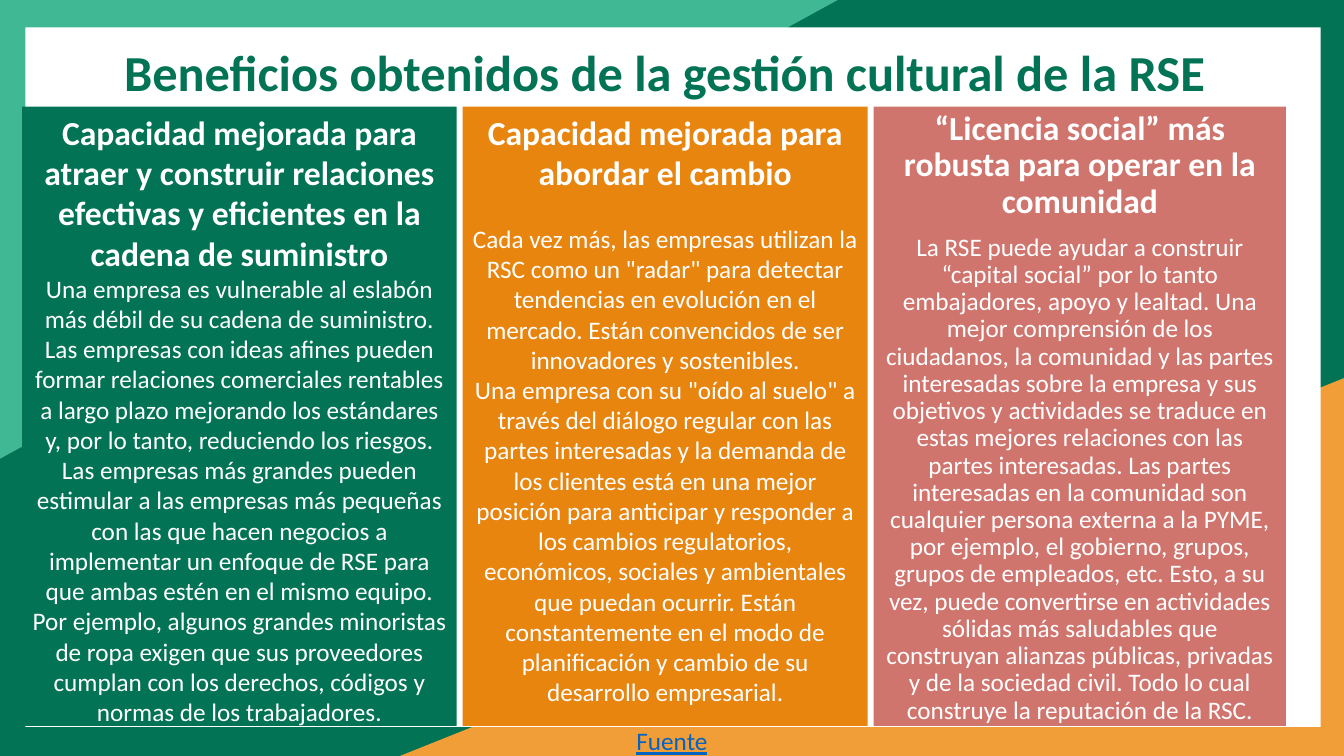
from pptx import Presentation
from pptx.dml.color import RGBColor
from pptx.enum.shapes import MSO_SHAPE
from pptx.enum.text import MSO_ANCHOR, MSO_AUTO_SIZE, PP_ALIGN
from pptx.util import Cm, Pt

COLORS = {
    "green": "027354",
    "mint": "40B894",
    "amber": "F29E38",
    "orange": "E7850F",
    "rose": "D0756E",
    "white": "FFFFFF",
    "link": "0563C1",
}
WIDTH, HEIGHT = 33.87, 19.05
COLUMN_TOP, COLUMN_HEIGHT, COLUMN_GAP = 2.69, 15.6, 0.15


def add_block(kind, left, top, width, height, color):
    block = page.shapes.add_shape(kind, Cm(left), Cm(top), Cm(width), Cm(height))
    block.shadow.inherit = False
    block.fill.solid()
    block.fill.fore_color.rgb = RGBColor.from_string(COLORS[color])
    block.line.fill.background()
    return block


def write(para, text, size, color, bold=False):
    para.text = text
    para.alignment = PP_ALIGN.CENTER
    font = para.runs[0].font
    font.name = "Calibri"
    font.size = Pt(size)
    font.bold = bold
    font.color.rgb = RGBColor.from_string(COLORS[color])


deck = Presentation()
deck.slide_width = Cm(WIDTH)
deck.slide_height = Cm(HEIGHT)
page = deck.slides.add_slide(deck.slide_layouts[5])

add_block(MSO_SHAPE.RECTANGLE, 0, 0, WIDTH, HEIGHT, "green")
amber_corner = add_block(MSO_SHAPE.ISOSCELES_TRIANGLE, 10.08, 9.53, 23.79, 9.52, "amber")
mint_corner = add_block(MSO_SHAPE.ISOSCELES_TRIANGLE, 0, 0, 21.11, 11.56, "mint")
for corner in (amber_corner, mint_corner):
    corner.adjustments[0] = 1
mint_corner.rotation = 180
add_block(MSO_SHAPE.RECTANGLE, 0.64, 0.69, 32.64, 17.63, "white")

title = page.shapes.title
title.element.getparent().append(title.element)
title.left, title.top, title.width, title.height = Cm(2.18), Cm(0.61), Cm(29.16), Cm(3.12)
title.text_frame.auto_size = MSO_AUTO_SIZE.NONE
title.text_frame.vertical_anchor = MSO_ANCHOR.TOP
heading = title.text_frame.paragraphs[0]
write(heading, "Beneficios obtenidos de la gestión cultural de la RSE", 36, "green", True)
heading.line_spacing = 1.2

columns = [
    (10.95, "green", 1.0, 0,
     "Capacidad mejorada para atraer y construir relaciones efectivas y eficientes en la cadena de suministro",
     ["Una empresa es vulnerable al eslabón más débil de su cadena de suministro. "
      "Las empresas con ideas afines pueden formar relaciones comerciales rentables a largo plazo "
      "mejorando los estándares y, por lo tanto, reduciendo los riesgos. "
      "Las empresas más grandes pueden estimular a las empresas más pequeñas con las que hacen negocios "
      "a implementar un enfoque de RSE para que ambas estén en el mismo equipo. "
      "Por ejemplo, algunos grandes minoristas de ropa exigen que sus proveedores cumplan "
      "con los derechos, códigos y normas de los trabajadores."]),
    (10.21, "orange", 1.0, 22,
     "Capacidad mejorada para abordar el cambio",
     ['Cada vez más, las empresas utilizan la RSC como un "radar" para detectar tendencias '
      "en evolución en el mercado. Están convencidos de ser innovadores y sostenibles.",
      'Una empresa con su "oído al suelo" a través del diálogo regular con las partes interesadas '
      "y la demanda de los clientes está en una mejor posición para anticipar y responder "
      "a los cambios regulatorios, económicos, sociales y ambientales que puedan ocurrir. "
      "Están constantemente en el modo de planificación y cambio de su desarrollo empresarial."]),
    (10.39, "rose", 0.9, 10,
     "“Licencia social” más robusta para operar en la comunidad",
     ["La RSE puede ayudar a construir “capital social” por lo tanto embajadores, apoyo y lealtad. "
      "Una mejor comprensión de los ciudadanos, la comunidad y las partes interesadas sobre la empresa "
      "y sus objetivos y actividades se traduce en estas mejores relaciones con las partes interesadas. "
      "Las partes interesadas en la comunidad son cualquier persona externa a la PYME, por ejemplo, "
      "el gobierno, grupos, grupos de empleados, etc. Esto, a su vez, puede convertirse en actividades "
      "sólidas más saludables que construyan alianzas públicas, privadas y de la sociedad civil. "
      "Todo lo cual construye la reputación de la RSC."]),
]
left = 0.56
for width, color, spacing, heading_gap, column_title, texts in columns:
    box = add_block(MSO_SHAPE.RECTANGLE, left, COLUMN_TOP, width, COLUMN_HEIGHT, color)
    left += width + COLUMN_GAP
    frame = box.text_frame
    frame.word_wrap = True
    frame.vertical_anchor = MSO_ANCHOR.TOP
    para = frame.paragraphs[0]
    write(para, column_title, 24, "white", True)
    para.line_spacing = spacing
    para.space_after = Pt(heading_gap)
    for text in texts:
        para = frame.add_paragraph()
        write(para, text, 18, "white")
        para.line_spacing = spacing

source = page.shapes.add_textbox(Cm(14), Cm(18.16), Cm(5.87), Cm(1.02))
source.text_frame.word_wrap = True
para = source.text_frame.paragraphs[0]
write(para, "Fuente", 18, "link")
para.runs[0].font.underline = True

deck.save("out.pptx")
